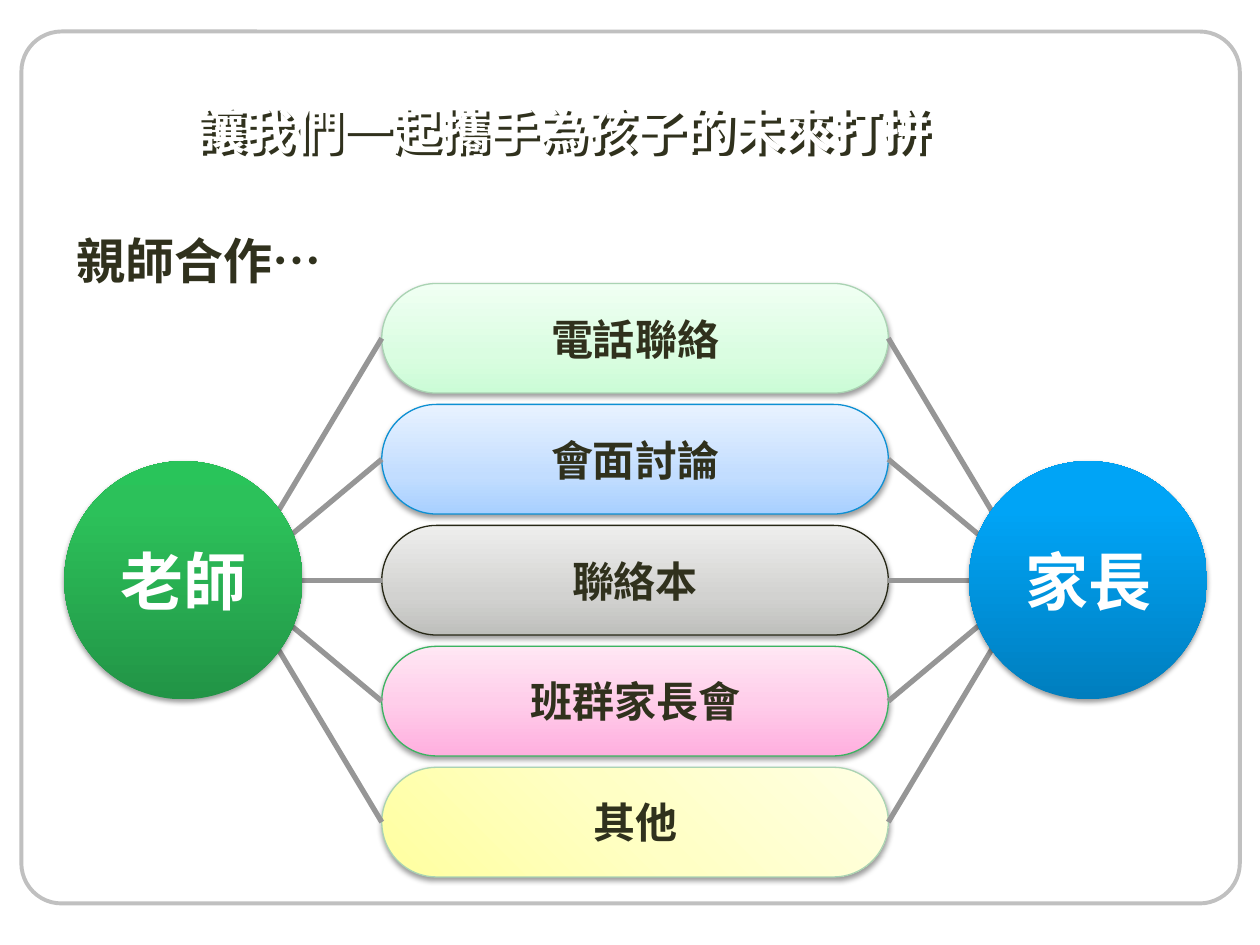
from copy import deepcopy

from lxml import etree
from pptx import Presentation
from pptx.dml.color import RGBColor
from pptx.enum.shapes import MSO_CONNECTOR, MSO_SHAPE
from pptx.enum.text import MSO_ANCHOR, PP_ALIGN
from pptx.oxml import parse_xml
from pptx.oxml.ns import nsdecls, qn
from pptx.util import Pt

ROUNDED, OVAL = MSO_SHAPE.ROUNDED_RECTANGLE, MSO_SHAPE.OVAL
STRAIGHT = MSO_CONNECTOR.STRAIGHT
MIDDLE, TOP = MSO_ANCHOR.MIDDLE, MSO_ANCHOR.TOP
LEFT, CENTER, JUSTIFY = PP_ALIGN.LEFT, PP_ALIGN.CENTER, PP_ALIGN.JUSTIFY

WHITE = RGBColor(0xFF, 0xFF, 0xFF)
INK = RGBColor(0x30, 0x31, 0x1D)
FRAME_GRAY = RGBColor(0xC0, 0xC0, 0xC0)
LINK_GRAY = RGBColor(0x96, 0x96, 0x96)
PALE_GREEN_EDGE = RGBColor(0xAA, 0xD3, 0xB3)
BLUE_EDGE = RGBColor(0x0D, 0x90, 0xD3)
DARK_EDGE = RGBColor(0x27, 0x28, 0x16)
GREEN_EDGE = RGBColor(0x3B, 0xB4, 0x61)

# Gradient stops: (position, colour)
MINT = [(0, RGBColor(0xCB, 0xFC, 0xD6)), (0.35, RGBColor(0xDA, 0xFD, 0xE1)), (1, RGBColor(0xF0, 0xFF, 0xF3))]
SKY = [(0, RGBColor(0xA8, 0xD0, 0xFF)), (0.35, RGBColor(0xC2, 0xDD, 0xFF)), (1, RGBColor(0xE8, 0xF2, 0xFF))]
SILVER = [(0, RGBColor(0xBE, 0xBF, 0xBC)), (0.35, RGBColor(0xD2, 0xD2, 0xD0)), (1, RGBColor(0xEE, 0xEE, 0xED))]
PINK = [(0, RGBColor(0xFF, 0xAF, 0xDF)), (0.5, RGBColor(0xFF, 0xCE, 0xEA)), (1, RGBColor(0xFF, 0xE7, 0xF4))]
YELLOW = [(0, RGBColor(0xFF, 0xFF, 0xA0)), (0.5, RGBColor(0xFF, 0xFF, 0xC5)), (1, RGBColor(0xFF, 0xFF, 0xE3))]
GREEN = [(0, RGBColor(0x22, 0x94, 0x46)), (0.8, RGBColor(0x2C, 0xC1, 0x5A)), (1, RGBColor(0x29, 0xC4, 0x5A))]
BLUE = [(0, RGBColor(0x00, 0x7E, 0xBE)), (0.8, RGBColor(0x00, 0xA4, 0xF6)), (1, RGBColor(0x00, 0xA4, 0xF7))]


def write(shape, text, size, color, font, align, anchor=MIDDLE):
    """Put one bold paragraph into the shape."""
    frame = shape.text_frame
    frame.word_wrap = True
    frame.vertical_anchor = anchor
    para = frame.paragraphs[0]
    para.text = text
    para.alignment = align
    para.font.size = Pt(size)
    para.font.bold = True
    para.font.color.rgb = color
    para.font.name = font


def add_glossy(kind, left, top, width, height, stops, angle, text, size, color):
    """Add a labelled shape with a three-stop gradient and a soft drop shadow."""
    shape = slide.shapes.add_shape(kind, Pt(left), Pt(top), Pt(width), Pt(height))
    shape.fill.gradient()
    shape.fill.gradient_angle = angle
    properties = shape._element.spPr
    stop_list = properties.find(".//" + qn("a:gsLst"))
    stop_list.append(deepcopy(stop_list[0]))
    for stop, (position, stop_color) in zip(shape.fill.gradient_stops, stops):
        stop.position = position
        stop.color.rgb = stop_color
    shape.line.fill.background()
    properties.append(parse_xml(
        f'<a:effectLst {nsdecls("a")}><a:outerShdw blurRad="39370" dist="20320" dir="5400000" rotWithShape="0">'
        '<a:srgbClr val="000000"><a:alpha val="38000"/></a:srgbClr></a:outerShdw></a:effectLst>'))
    frame = shape.text_frame
    frame.margin_left = frame.margin_right = frame.margin_top = frame.margin_bottom = Pt(3.6)
    write(shape, text, size, color, "Arial", CENTER)
    return shape


deck = Presentation()
deck.slide_width, deck.slide_height = Pt(720), Pt(540)
slide = deck.slides.add_slide(deck.slide_layouts[5])

border = slide.shapes.add_shape(ROUNDED, Pt(12.24), Pt(18), Pt(696.24), Pt(498.24))
border.adjustments[0] = 0.046
border.shadow.inherit = False
border.fill.background()
border.line.color.rgb = FRAME_GRAY
border.line.width = Pt(2.25)

# Contact channels, stacked between the two partners
PILL_LEFT, PILL_TOP, PILL_WIDTH, PILL_HEIGHT, PILL_STEP = 218.16, 162, 289.44, 62.64, 69.12
channels = [
    ("電話聯絡", MINT, 90, PALE_GREEN_EDGE),
    ("會面討論", SKY, 90, BLUE_EDGE),
    ("聯絡本", SILVER, 90, DARK_EDGE),
    ("班群家長會", PINK, 90, GREEN_EDGE),
    ("其他", YELLOW, 45, PALE_GREEN_EDGE),
]
for row, (label, stops, angle, edge) in enumerate(channels):
    pill = add_glossy(ROUNDED, PILL_LEFT, PILL_TOP + row * PILL_STEP, PILL_WIDTH, PILL_HEIGHT,
                      stops, angle, label, 24, INK)
    pill.adjustments[0] = 0.5
    pill.line.color.rgb = edge
    pill.line.width = Pt(0.75)

# Links run from each pill end to a point behind the partner's circle
HUB_Y = PILL_TOP + 2 * PILL_STEP + PILL_HEIGHT / 2
for pill_x, hub_x in [(PILL_LEFT, 135.36), (PILL_LEFT + PILL_WIDTH, 590.4)]:
    for row in range(len(channels)):
        pill_y = PILL_TOP + row * PILL_STEP + PILL_HEIGHT / 2
        link = slide.shapes.add_connector(STRAIGHT, Pt(pill_x), Pt(pill_y), Pt(hub_x), Pt(HUB_Y))
        link.line.color.rgb = LINK_GRAY
        link.line.width = Pt(3)
        etree.SubElement(link._element.spPr, qn("a:effectLst"))

DIAMETER = 136.08
for left, stops, label in [(36.72, GREEN, "老師"), (553.68, BLUE, "家長")]:
    add_glossy(OVAL, left, HUB_Y - DIAMETER / 2, DIAMETER, DIAMETER, stops, 90, label, 36, WHITE)

title = slide.shapes.title
title.left, title.top, title.width, title.height = Pt(105.12), Pt(37.44), Pt(459.36), Pt(73.44)
write(title, "讓我們一起攜手為孩子的未來打拼", 28, WHITE, "DejaVu Sans", LEFT)
title._element.spPr.append(parse_xml(
    f'<a:effectLst {nsdecls("a")}><a:outerShdw dist="35560" dir="2700000">'
    f'<a:srgbClr val="{INK}"/></a:outerShdw></a:effectLst>'))

subtitle = slide.shapes.add_textbox(Pt(36.72), Pt(128.16), Pt(221.76), Pt(87.84))
write(subtitle, "親師合作…", 28, INK, "Noto Sans CJK TC", JUSTIFY, TOP)

deck.save("out.pptx")
